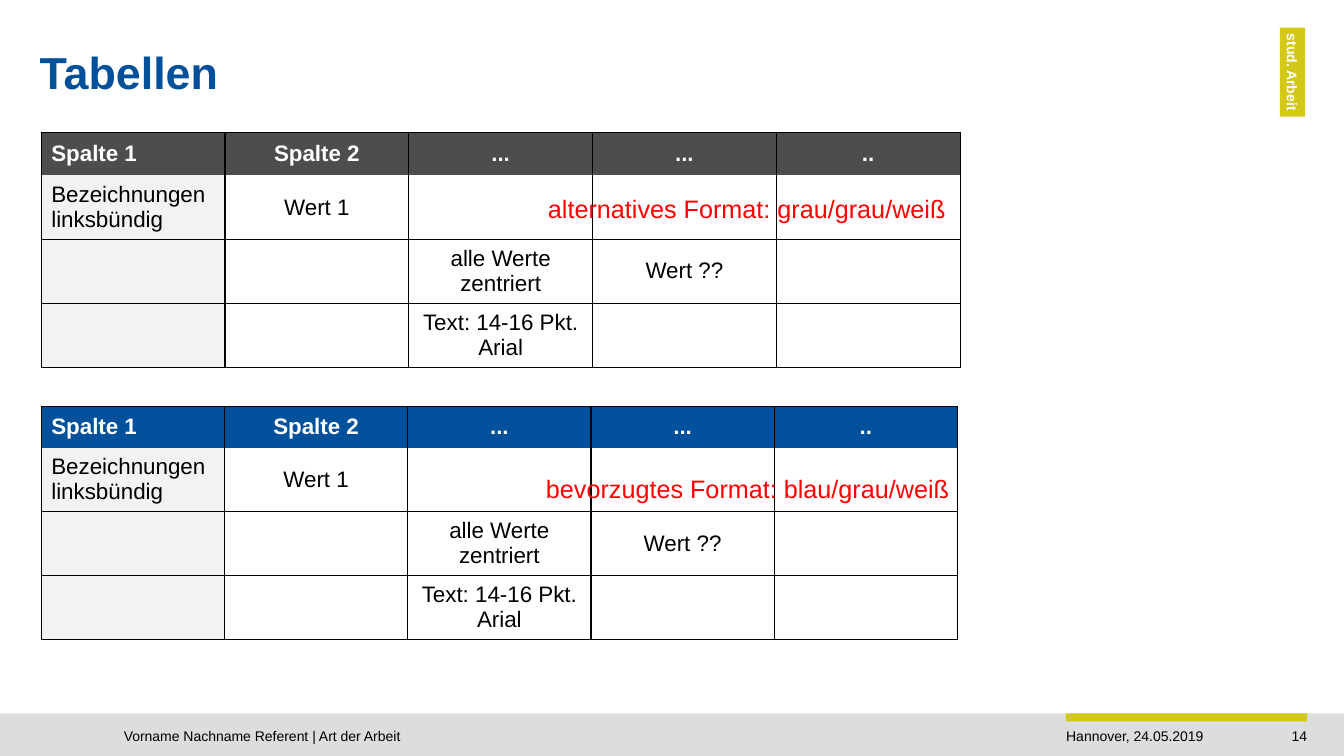
import pptx
import pptx.dml.color
import pptx.enum.shapes
import pptx.enum.text
import pptx.util
from pptx.oxml import parse_xml
from pptx.oxml.ns import nsdecls

Cm, Pt = pptx.util.Cm, pptx.util.Pt
ALIGN = pptx.enum.text.PP_ALIGN
MIDDLE = pptx.enum.text.MSO_ANCHOR.MIDDLE
RECT = pptx.enum.shapes.MSO_SHAPE.RECTANGLE

# Content
TITLE = "Tabellen"
ROWS = [
    ["Spalte 1", "Spalte 2", "...", "...", ".."],
    ["Bezeichnungen linksbündig", "Wert 1", "", "", ""],
    ["", "", "alle Werte zentriert", "Wert ??", ""],
    ["", "", "Text: 14-16 Pkt. Arial", "", ""],
]
BLUE, LIME, SILVER = "00509B", "D3C817", "DCDEDE"
DARK, PALE, RED = "4D4D4D", "F2F2F2", "FF0000"
BLACK, WHITE = "000000", "FFFFFF"
LEFT, BODY_ROW = 1.04, 1.42
# top, width, header height, header colour, note, note box (cm)
TABLES = [
    (3.33, 23.16, 1.09, DARK, "alternatives Format: grau/grau/weiß", (13.56, 4.75, 10.62, 1.02)),
    (10.24, 23.09, 1.04, BLUE, "bevorzugtes Format: blau/grau/weiß", (13.51, 11.81, 10.77, 1.02)),
]
# text, alignment, box, left and right inset (cm)
FOOTER = [
    ("14", ALIGN.RIGHT, (30.76, 18.21, 2.18, 0.84), 0.25, 0),
    ("Vorname Nachname Referent | Art der Arbeit", ALIGN.LEFT, (3.12, 18.21, 22.99, 0.69), 0, 0.25),
    ("Hannover, 24.05.2019", ALIGN.LEFT, (26.87, 18.21, 4.85, 0.69), 0, 0),
]


def rgb(color):
    return pptx.dml.color.RGBColor.from_string(color)


def write(tf, text, size, color, align=ALIGN.LEFT, bold=False):
    p = tf.paragraphs[0]
    p.text = text
    p.alignment = align
    p.font.name, p.font.size, p.font.bold = "Arial", Pt(size), bold
    p.font.color.rgb = rgb(color)
    return p


def add_bar(box, color):
    sp = slide.shapes.add_shape(RECT, *map(Cm, box))
    sp.shadow.inherit = False
    sp.fill.solid()
    sp.fill.fore_color.rgb = rgb(color)
    sp.line.fill.background()
    return sp


def add_text(box, text, size, color, align=ALIGN.LEFT, left=0.25, right=0.25, wrap=True):
    tf = slide.shapes.add_textbox(*map(Cm, box)).text_frame
    tf.word_wrap = wrap
    tf.margin_left, tf.margin_right = Cm(left), Cm(right)
    write(tf, text, size, color, align)


def set_border(cell, side, width):
    paint = f'<a:solidFill><a:srgbClr val="{BLACK}"/></a:solidFill>' if width else "<a:noFill/>"
    cell._tc.get_or_add_tcPr().append(parse_xml(
        f'<a:ln{side} {nsdecls("a")} w="{Pt(width)}">{paint}</a:ln{side}>'))


def add_table(top, width, header_height, header_color):
    n_rows, n_cols = len(ROWS), len(ROWS[0])
    heights = [header_height] + [BODY_ROW] * (n_rows - 1)
    table = slide.shapes.add_table(
        n_rows, n_cols, Cm(LEFT), Cm(top), Cm(width), Cm(sum(heights))).table
    table.horz_banding = False
    for column in table.columns:
        column.width = Cm(width / n_cols)
    for r, height in enumerate(heights):
        table.rows[r].height = Cm(height)
        for c, text in enumerate(ROWS[r]):
            cell = table.cell(r, c)
            # Thin outer frame, 1 pt grid, no line under the header
            set_border(cell, "L", 0.75 if c == 0 else 1)
            set_border(cell, "R", 0.75 if c == n_cols - 1 else 1)
            set_border(cell, "T", {0: 0.75, 1: 0}.get(r, 1))
            set_border(cell, "B", {0: 0, n_rows - 1: 0.75}.get(r, 1))
            fill = header_color if r == 0 else PALE if c == 0 else None
            if fill:
                cell.fill.solid()
                cell.fill.fore_color.rgb = rgb(fill)
            else:
                cell.fill.background()
            cell.vertical_anchor = MIDDLE
            if text:
                write(cell.text_frame, text, 16, BLACK if r else WHITE,
                      ALIGN.CENTER if c else ALIGN.LEFT, r == 0)


prs = pptx.Presentation()
prs.slide_width, prs.slide_height = Cm(33.87), Cm(19.05)
slide = prs.slides.add_slide(prs.slide_layouts[5])

# Footer band
add_bar((0, 17.98, 33.87, 1.07), SILVER)
add_bar((26.87, 17.98, 6.07, 0.2), LIME)
for text, align, box, left, right in FOOTER:
    add_text(box, text, 10, BLACK, align, left, right)

# Rotated label
label = add_bar((31.45, 1.5, 2.24, 0.64), LIME)
label.rotation = 90
tf = label.text_frame
tf.margin_left = tf.margin_right = 0
tf.margin_top = tf.margin_bottom = Cm(0.1)
write(tf, "stud. Arbeit", 10, WHITE, ALIGN.CENTER, True)

# Title
title = slide.shapes.title
title.left, title.top, title.width, title.height = map(Cm, (1, 0.89, 28.93, 2.01))
tf = title.text_frame
tf.margin_left = tf.margin_right = tf.margin_top = tf.margin_bottom = 0
tf.vertical_anchor = MIDDLE
write(tf, TITLE, 32, BLUE, bold=True).line_spacing = 0.9

# Tables, then the notes on top of them
for top, width, header_height, color, note, note_box in TABLES:
    add_table(top, width, header_height, color)
    add_text(note_box, note, 18, RED, wrap=False)

prs.save("out.pptx")
